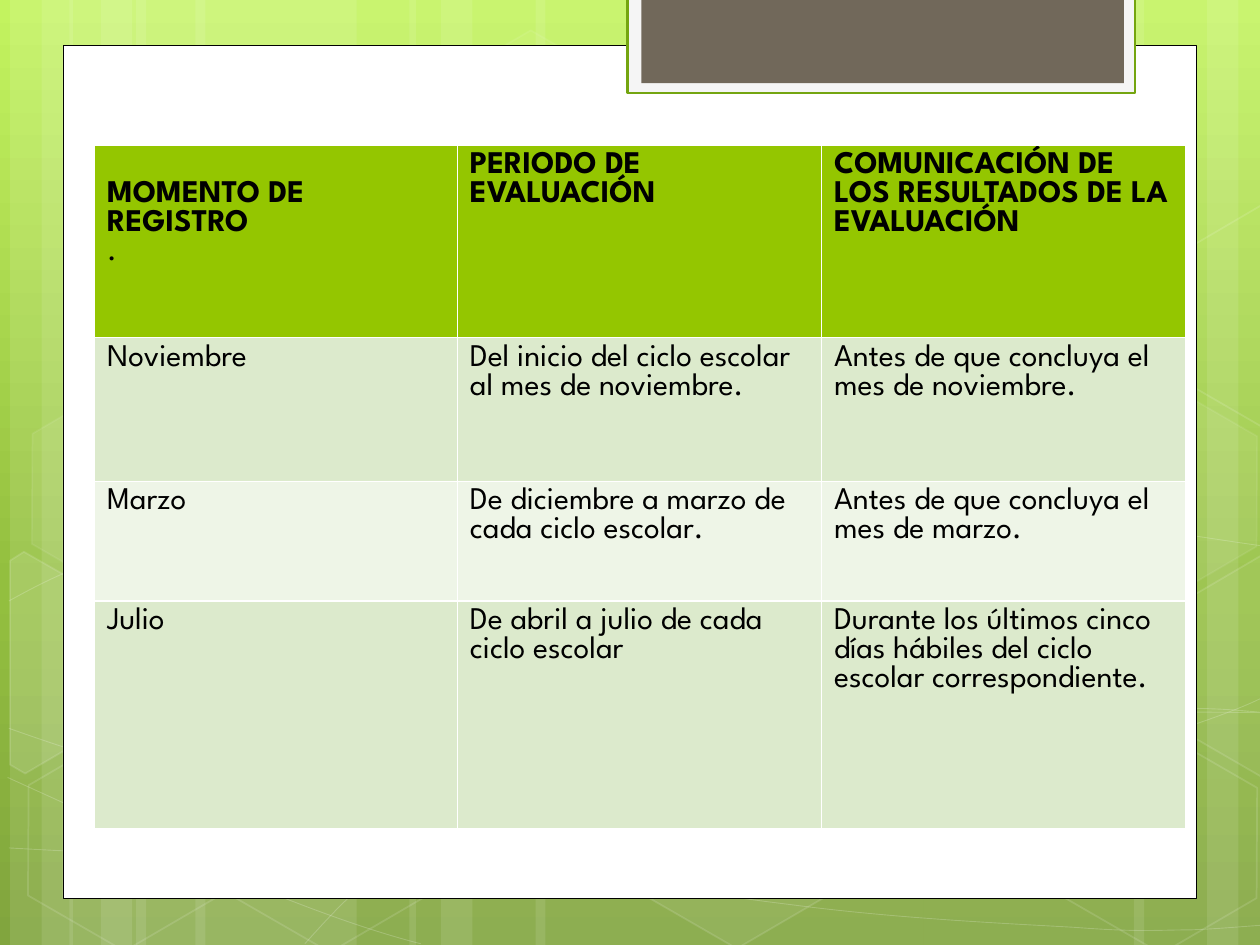
from copy import deepcopy

from lxml.etree import SubElement
from pptx import Presentation
from pptx.dml.color import RGBColor
from pptx.enum.shapes import MSO_SHAPE
from pptx.oxml.ns import qn
from pptx.util import Inches, Pt

FONT = "League Spartan"
WHITE, BLACK, GREEN = "FFFFFF", "000000", "94C600"
BACKGROUND = [(0, "C3F35F"), (0.62, "93BF3F"), (1, "81A53E")]

# left, width of the full-height translucent stripes
STRIPES = [
    (1.08, 1.75), (0.08, 0.5), (0.33, 0.83),
    (1.55, 1.75), (0.55, 0.5), (0.8, 0.83),
    (7.33, 1.75), (9.58, 0.5), (9, 0.83),
    (4.25, 3.08), (3.25, 0.5), (3.5, 0.83),
]
# start point, then two control points and an end point per segment
CURVES = [
    [(0.07, 6.73), (0.61, 6.76), (1.15, 6.79), (1.9, 6.78), (2.65, 6.77), (3.58, 6.75),
     (4.58, 6.65), (5.58, 6.55), (7, 6.36), (7.92, 6.17), (8.83, 5.98), (9.77, 5.68),
     (10.07, 5.51)],
    [(0.07, 4.77), (0.36, 4.61), (0.65, 4.46), (1.21, 4.31), (1.78, 4.16), (2.59, 3.94),
     (3.47, 3.87), (4.36, 3.8), (5.44, 3.79), (6.54, 3.87), (7.64, 3.95), (9.47, 4.26),
     (10.07, 4.34)],
    [(0.06, 6.17), (1.27, 6.72), (2.47, 7.27), (3.34, 7.49)],
    [(0.07, 5.78), (0.38, 5.89), (0.7, 6), (1.28, 6.16), (1.86, 6.31), (2.73, 6.56),
     (3.57, 6.73), (4.4, 6.9), (5.45, 7.08), (6.28, 7.18), (7.11, 7.29), (8, 7.33),
     (8.53, 7.36), (9.05, 7.4), (9.19, 7.38), (9.45, 7.38), (9.71, 7.37), (9.89, 7.35),
     (10.07, 7.34)],
    [(2.42, 7.49), (2.6, 7.29), (2.78, 7.09), (3.02, 6.91), (3.26, 6.73), (3.6, 6.53),
     (3.88, 6.39), (4.16, 6.25), (4.33, 6.19), (4.7, 6.09), (5.06, 5.99), (5.73, 5.85),
     (6.08, 5.78), (6.44, 5.71), (6.49, 5.71), (6.8, 5.69), (7.11, 5.66), (7.6, 5.63),
     (7.94, 5.62), (8.29, 5.61), (8.86, 5.62), (8.86, 5.62), (9.08, 5.62), (9.31, 5.62),
     (9.53, 5.62), (9.71, 5.63), (9.88, 5.64), (9.97, 5.65), (10.06, 5.66), (10.03, 5.65),
     (10.06, 5.66)],
]
CURVES[-1].pop(21)  # the straight stretch starts where the last segment ended
# left, top, fill opacity (0 for none), line opacity
HEXAGONS = [
    (3.34, 0.36, 4, 8), (4.97, 5.89, 6, 12), (0.11, 5.91, 0, 12), (0.14, 3.12, 7, 8),
    (1.74, 5.92, 0, 12), (8.34, 5.93, 0, 12), (8.34, 3.14, 7, 8),
]
# outline, fill opacity of the hexagons cut off by the slide edge
CUT_HEXAGONS = [
    ([(0.08, 4.45), (0.19, 4.38), (0.96, 4.82), (0.95, 5.7), (0.2, 6.14), (0.08, 6.07)], 10),
    ([(9.26, 4.85), (10.01, 4.41), (10.09, 4.46), (10.09, 6.13), (10.02, 6.17), (9.26, 5.73)], 4),
    ([(9.26, 2.07), (10.01, 1.63), (10.1, 1.68), (10.09, 3.35), (10.02, 3.39), (9.26, 2.95)], 0),
]

COLUMN_WIDTHS = [2.88, 2.89, 2.89]
ROW_HEIGHTS = [1.53, 1.14, 0.95, 1.81]
ROW_FILLS = [GREEN, "DCEACC", "EEF5E7", "DCEACC"]
SCHEDULE = [
    ["MOMENTO DE REGISTRO", "PERIODO DE EVALUACIÓN",
     "COMUNICACIÓN DE LOS RESULTADOS DE LA EVALUACIÓN"],
    ["Noviembre", "Del inicio del ciclo escolar al mes de noviembre.",
     "Antes de que concluya el mes de noviembre."],
    ["Marzo", "De diciembre a marzo de cada ciclo escolar.",
     "Antes de que concluya el mes de marzo."],
    ["Julio", "De abril a julio de cada ciclo escolar",
     "Durante los últimos cinco días hábiles del ciclo escolar correspondiente."],
]


def rgb(value):
    return RGBColor.from_string(value)


def paint(fill, color, opacity=100):
    """Make a fill solid, with its opacity in percent."""
    fill.solid()
    fill.fore_color.rgb = rgb(color)
    if opacity < 100:
        color_node = fill._xPr.find(".//" + qn("a:srgbClr"))
        SubElement(color_node, qn("a:alpha"), val=str(opacity * 1000))


def bend(shape):
    """Turn each three line segments of a freeform into one cubic Bézier."""
    outline = shape.element.find(".//" + qn("a:pathLst"))[0]
    lines = outline.findall(qn("a:lnTo"))
    for first in range(0, len(lines), 3):
        curve = SubElement(outline, qn("a:cubicBezTo"))
        for line in lines[first:first + 3]:
            curve.append(line[0])
            outline.remove(line)


class SlideBuilder:
    def __init__(self, slide, font, text_size):
        self.slide = slide
        self.font = font
        self.text_size = text_size

    def background(self, stops):
        fill = self.slide.background.fill
        fill.gradient()
        fill.gradient_angle = 270
        stop_list = self.slide.element.find(".//" + qn("a:gsLst"))
        stop_list.append(deepcopy(stop_list[0]))
        for stop, (position, color) in zip(fill.gradient_stops, stops):
            stop.position = position
            stop.color.rgb = rgb(color)

    def style(self, shape, fill, fill_opacity, line, line_width, line_opacity):
        shape.shadow.inherit = False
        if fill and fill_opacity:
            paint(shape.fill, fill, fill_opacity)
        else:
            shape.fill.background()
        if line:
            paint(shape.line.fill, line, line_opacity)
            shape.line.width = Pt(line_width)
        else:
            shape.line.fill.background()

    def preset(self, kind, left, top, width, height, fill=None, fill_opacity=100,
               line=None, line_width=1, line_opacity=100):
        shape = self.slide.shapes.add_shape(
            kind, Inches(left), Inches(top), Inches(width), Inches(height))
        self.style(shape, fill, fill_opacity, line, line_width, line_opacity)
        return shape

    def hexagon(self, left, top, fill_opacity, line_opacity):
        shape = self.preset(MSO_SHAPE.HEXAGON, left, top, 1.75, 1.52, WHITE, fill_opacity,
                            WHITE, 1, line_opacity)
        shape.adjustments[0] = 0.285
        shape.rotation = 30

    def outline(self, points, closed, fill_opacity, line_width, line_opacity):
        start, *rest = [(Inches(x), Inches(y)) for x, y in points]
        builder = self.slide.shapes.build_freeform(*start)
        builder.add_line_segments(rest, close=closed)
        shape = builder.convert_to_shape()
        self.style(shape, WHITE, fill_opacity, WHITE, line_width, line_opacity)
        return shape

    def text(self, paragraph, words, bold):
        run = paragraph.add_run()
        run.text = words
        run.font.name = self.font
        run.font.size = Pt(self.text_size)
        run.font.bold = bold
        run.font.color.rgb = rgb(BLACK)

    def table(self, left, top, rows, widths, heights, fills):
        table = self.slide.shapes.add_table(
            len(rows), len(widths), Inches(left), Inches(top),
            Inches(sum(widths)), Inches(sum(heights))).table
        for column, width in zip(table.columns, widths):
            column.width = Inches(width)
        for r, texts in enumerate(rows):
            table.rows[r].height = Inches(heights[r])
            for c, words in enumerate(texts):
                cell = table.cell(r, c)
                paint(cell.fill, fills[r])
                self.text(cell.text_frame.paragraphs[0], words, bold=r == 0)
        return table


def main():
    presentation = Presentation()
    presentation.slide_width, presentation.slide_height = Inches(10), Inches(7.5)
    slide = presentation.slides.add_slide(presentation.slide_layouts[6])
    page = SlideBuilder(slide, FONT, 18)

    page.background(BACKGROUND)
    for left, width in STRIPES:
        page.preset(MSO_SHAPE.RECTANGLE, left, 0, width, 7.5, WHITE, 10)
    for controls in CURVES:
        bend(page.outline(controls, False, 0, 0.5, 20))
    for hexagon in HEXAGONS:
        page.hexagon(*hexagon)
    for points, opacity in CUT_HEXAGONS:
        page.outline(points, True, opacity, 1, 12)

    page.preset(MSO_SHAPE.RECTANGLE, 0.5, 0.36, 9, 6.77, WHITE, line=BLACK, line_width=0.5)
    page.preset(MSO_SHAPE.RECTANGLE, 4.98, -0.02, 4.03, 0.76, "F5F5F5",
                line="74A510", line_width=1.25)
    page.preset(MSO_SHAPE.RECTANGLE, 5.09, -0.02, 3.83, 0.68, "71685A")

    schedule = page.table(0.75, 1.15, SCHEDULE, COLUMN_WIDTHS, ROW_HEIGHTS, ROW_FILLS)
    moment_header = schedule.cell(0, 0)
    moment_header.margin_top = Inches(0.28)
    page.text(moment_header.text_frame.add_paragraph(), ".", bold=False)

    presentation.save("out.pptx")


if __name__ == "__main__":
    main()
